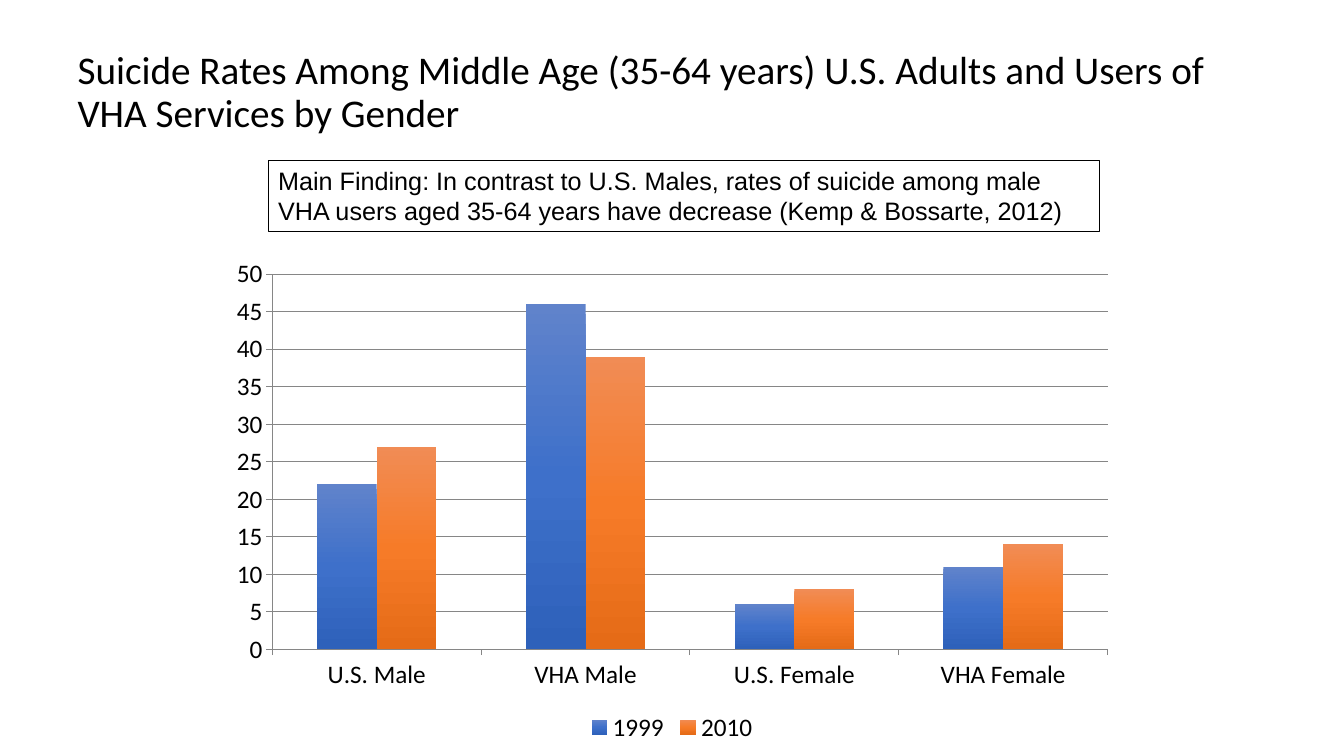
from dataclasses import dataclass

from lxml.etree import SubElement
from pptx import Presentation
from pptx.chart.axis import CategoryAxis, ValueAxis
from pptx.chart.data import CategoryChartData
from pptx.chart.series import BarSeries
from pptx.dml.color import RGBColor
from pptx.enum.chart import XL_CHART_TYPE, XL_LEGEND_POSITION, XL_TICK_MARK
from pptx.enum.text import MSO_ANCHOR, MSO_AUTO_SIZE, PP_ALIGN
from pptx.oxml.ns import qn
from pptx.slide import Slide
from pptx.text.text import Font, TextFrame
from pptx.util import Cm, Pt


@dataclass(frozen=True)
class Theme:
    text: str = "000000"
    grid: str = "868686"
    heading_font: str = "Calibri"
    finding_font: str = "Arial"
    title_size: int = 28
    body_size: int = 18


@dataclass(frozen=True)
class Box:
    left: float
    top: float
    width: float
    height: float

    def lengths(self) -> tuple[Cm, Cm, Cm, Cm]:
        return Cm(self.left), Cm(self.top), Cm(self.width), Cm(self.height)


@dataclass(frozen=True)
class YearRates:
    year: str
    rates: tuple[int, ...]
    gradient: tuple[str, str, str]


THEME = Theme()
TITLE_BOX = Box(1.7, 0.76, 30.48, 3.18)
CHART_BOX = Box(5.51, 6.27, 22.86, 12.57)
FINDING_BOX = Box(6.76, 4.04, 20.96, 1.8)
GROUPS = ("U.S. Male", "VHA Male", "U.S. Female", "VHA Female")
YEARS = (
    YearRates("1999", (22, 46, 6, 11), ("6083CB", "3E70CA", "2E61BA")),
    YearRates("2010", (27, 39, 8, 14), ("F18C55", "F67B28", "E56B17")),
)


def style_font(font: Font, name: str, size: int) -> None:
    font.name = name
    font.size = Pt(size)
    font.bold = False
    font.color.rgb = RGBColor.from_string(THEME.text)


def write_text(frame: TextFrame, text: str, name: str, size: int) -> None:
    frame.word_wrap = True
    paragraph = frame.paragraphs[0]
    paragraph.alignment = PP_ALIGN.LEFT
    run = paragraph.add_run()
    run.text = text
    style_font(run.font, name, size)


def add_title(slide: Slide) -> None:
    title = slide.shapes.title
    title.left, title.top, title.width, title.height = TITLE_BOX.lengths()
    frame = title.text_frame
    write_text(
        frame,
        "Suicide Rates Among Middle Age (35-64 years) U.S. Adults and Users of "
        "VHA Services by Gender",
        THEME.heading_font,
        THEME.title_size,
    )
    frame.auto_size = MSO_AUTO_SIZE.NONE
    frame.vertical_anchor = MSO_ANCHOR.MIDDLE
    frame.paragraphs[0].line_spacing = 0.9


def add_finding(slide: Slide) -> None:
    finding = slide.shapes.add_textbox(*FINDING_BOX.lengths())
    finding.line.color.rgb = RGBColor.from_string(THEME.text)
    finding.line.width = Pt(0.75)
    write_text(
        finding.text_frame,
        "Main Finding: In contrast to U.S. Males, rates of suicide among male "
        "VHA users aged 35-64 years have decrease (Kemp & Bossarte, 2012)",
        THEME.finding_font,
        THEME.body_size,
    )
    finding.text_frame.auto_size = MSO_AUTO_SIZE.SHAPE_TO_FIT_TEXT


def fill_series(series: BarSeries, colors: tuple[str, str, str]) -> None:
    properties = series.format.fill
    properties.gradient()
    properties.gradient_angle = 270
    stops = series._element.find(".//" + qn("a:gsLst"))
    for stop in list(stops):
        stops.remove(stop)
    for index, color in enumerate(colors):
        stop = SubElement(stops, qn("a:gs"), pos=str(index * 50000))
        SubElement(stop, qn("a:srgbClr"), val=color)


def style_axis(axis: CategoryAxis | ValueAxis) -> None:
    axis.major_tick_mark = XL_TICK_MARK.OUTSIDE
    axis.minor_tick_mark = XL_TICK_MARK.NONE
    axis.format.line.color.rgb = RGBColor.from_string(THEME.grid)
    axis.format.line.width = Pt(0.75)
    style_font(axis.tick_labels.font, THEME.heading_font, THEME.body_size)


def add_rates_chart(slide: Slide) -> None:
    data = CategoryChartData()
    data.categories = GROUPS
    for entry in YEARS:
        data.add_series(entry.year, entry.rates)
    chart = slide.shapes.add_chart(
        XL_CHART_TYPE.COLUMN_CLUSTERED, *CHART_BOX.lengths(), data
    ).chart
    style_font(chart.font, THEME.heading_font, THEME.body_size)
    chart.has_title = False

    plot = chart.plots[0]
    plot.gap_width = 150
    plot.overlap = 0
    plot.vary_by_categories = False
    for series, entry in zip(plot.series, YEARS):
        fill_series(series, entry.gradient)

    style_axis(chart.category_axis)
    value_axis = chart.value_axis
    style_axis(value_axis)
    value_axis.minimum_scale = 0
    value_axis.maximum_scale = 50
    value_axis.major_unit = 5
    value_axis.has_major_gridlines = True
    gridline = value_axis.major_gridlines.format.line
    gridline.color.rgb = RGBColor.from_string(THEME.grid)
    gridline.width = Pt(0.75)

    chart.has_legend = True
    chart.legend.position = XL_LEGEND_POSITION.BOTTOM
    chart.legend.include_in_layout = False
    style_font(chart.legend.font, THEME.heading_font, THEME.body_size)


def main() -> None:
    presentation = Presentation()
    presentation.slide_width = Cm(33.87)
    presentation.slide_height = Cm(19.05)
    slide = presentation.slides.add_slide(presentation.slide_layouts[5])
    add_title(slide)
    add_rates_chart(slide)
    add_finding(slide)
    presentation.save("out.pptx")


if __name__ == "__main__":
    main()
